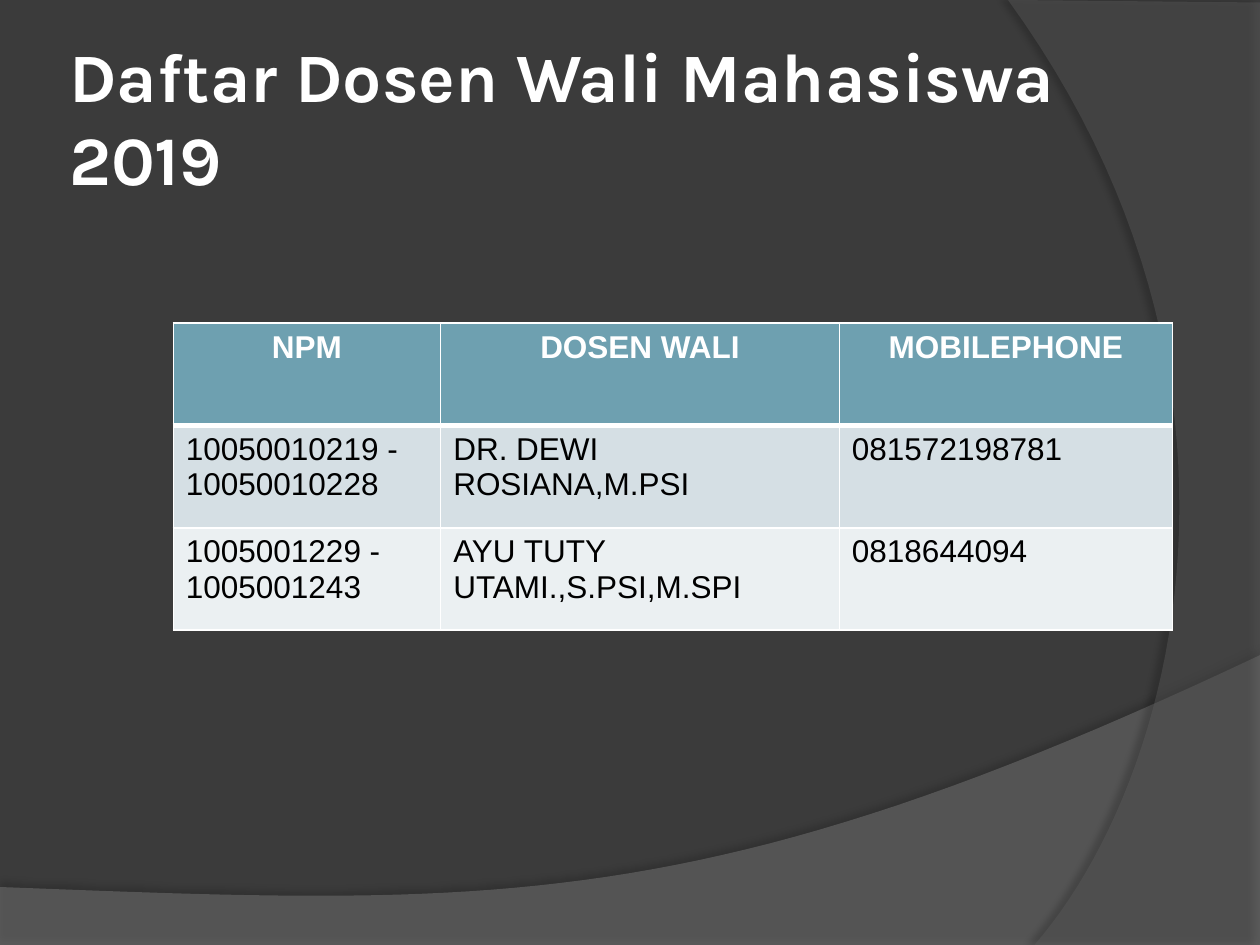
from lxml.etree import SubElement
from pptx import Presentation
from pptx.dml.color import RGBColor
from pptx.enum.text import MSO_ANCHOR, PP_ALIGN
from pptx.oxml import parse_xml
from pptx.oxml.ns import nsdecls, qn
from pptx.util import Inches, Pt

WIDE, HIGH = Inches(10), Inches(7.5)
WHITE = RGBColor(0xFF, 0xFF, 0xFF)
BLACK = RGBColor(0, 0, 0)
DARK = RGBColor(0x3B, 0x3B, 0x3B)
GREY = RGBColor(0x7F, 0x7F, 0x7F)
DUSK = RGBColor(0x5E, 0x5E, 0x5E)
TEAL = RGBColor(0x6E, 0xA0, 0xB0)
BANDS = [RGBColor(0xD5, 0xDF, 0xE4), RGBColor(0xEB, 0xF0, 0xF2)]

# Boxes are left, top, width and height in percent of the slide.
WAVE = (0, 69.33, 100, 30.67)
ARC = (80, 0, 20, 100)
TITLE = (5, 4, 81.7, 16.67)
TABLE = (13.75, 34.2, 79.3, 32.5)

HEAD = {"size": Pt(18), "name": "Arial", "bold": True}
BODY = {**HEAD, "bold": False}
COLS = [2.12, 3.16, 2.64]
ROWS = [
    ["NPM", "DOSEN WALI", "MOBILEPHONE"],
    ["10050010219 - 10050010228", "DR. DEWI ROSIANA,M.PSI", "081572198781"],
    ["1005001229 - 1005001243", "AYU TUTY UTAMI.,S.PSI,M.SPI", "0818644094"],
]


def place(box):
    left, top, wide, high = box
    return [int(part * full / 100) for part, full in
            ((left, WIDE), (top, HIGH), (wide, WIDE), (high, HIGH))]


def curve(ends, steps=48):
    """Points along a cubic curve given by its four control points."""
    for step in range(1, steps + 1):
        t = step / steps
        u = 1 - t
        share = (u ** 3, 3 * u * u * t, 3 * u * t * t, t ** 3)
        yield tuple(sum(s * p[axis] for s, p in zip(share, ends))
                    for axis in (0, 1))


def style(run, look, color):
    for key, value in look.items():
        setattr(run.font, key, value)
    run.font.color.rgb = color


def sweep(slide, box, edge, bend, color, alpha, shade):
    """Draw a see-through shape: straight edge points, then a curve back."""
    left, top, wide, high = place(box)
    points = [(int(left + x * wide / 100), int(top + y * high / 100))
              for x, y in [*edge, *curve([edge[-1], *bend])]]
    form = slide.shapes.build_freeform(*points[0], scale=1)
    form.add_line_segments(points[1:], close=True)
    shape = form.convert_to_shape()
    shape.fill.solid()
    shape.fill.fore_color.rgb = color
    shape.line.fill.background()
    tint = shape.fill._xPr.find(qn("a:solidFill"))[0]
    SubElement(tint, qn("a:alpha")).set("val", str(alpha * 1000))
    dark, blur, gap, turn = shade
    shape._element.spPr.append(parse_xml(
        f'<a:effectLst {nsdecls("a")}><a:outerShdw blurRad="{Pt(blur)}" '
        f'dist="{Pt(gap)}" dir="{turn * 60000}" algn="ctr" rotWithShape="0">'
        f'<a:srgbClr val="{BLACK}"><a:alpha val="{dark * 1000}"/></a:srgbClr>'
        '</a:outerShdw></a:effectLst>'))


def title(slide, box, text):
    frame = slide.shapes.add_textbox(*place(box)).text_frame
    inset = Inches(0.05)
    look = {"word_wrap": True, "vertical_anchor": MSO_ANCHOR.MIDDLE,
            "margin_left": inset, "margin_right": inset,
            "margin_top": inset, "margin_bottom": inset}
    for key, value in look.items():
        setattr(frame, key, value)
    run = frame.paragraphs[0].add_run()
    run.text = text
    style(run, {"size": Pt(39.6), "name": "Karla", "bold": True}, WHITE)


def border(cell, row):
    """White lines, with a thick one under the header row."""
    thick = {("B", 0), ("T", 1)}
    props = cell._tc.get_or_add_tcPr()
    for spot, side in enumerate("LRTB"):
        width = Pt(3 if (side, row) in thick else 1)
        props.insert(spot, parse_xml(
            f'<a:ln{side} {nsdecls("a")} w="{width}"><a:solidFill>'
            f'<a:srgbClr val="{WHITE}"/></a:solidFill></a:ln{side}>'))


def table(slide, box, rows):
    left, top, wide, high = place(box)
    grid = slide.shapes.add_table(
        len(rows), len(COLS), left, top, wide, high).table
    for col, part in zip(grid.columns, COLS):
        col.width = int(wide * part / sum(COLS))
    for r, texts in enumerate(rows):
        grid.rows[r].height = high // len(rows)
        for c, text in enumerate(texts):
            cell = grid.cell(r, c)
            cell.fill.solid()
            cell.fill.fore_color.rgb = BANDS[(r - 1) % 2] if r else TEAL
            border(cell, r)
            para = cell.text_frame.paragraphs[0]
            para.alignment = PP_ALIGN.LEFT if r else PP_ALIGN.CENTER
            run = para.add_run()
            run.text = text
            style(run, BODY if r else HEAD, BLACK if r else WHITE)


def main():
    deck = Presentation()
    deck.slide_width, deck.slide_height = WIDE, HIGH
    slide = deck.slides.add_slide(deck.slide_layouts[6])
    slide.background.fill.solid()
    slide.background.fill.fore_color.rgb = DARK
    sweep(slide, WAVE, [(0, 80), (0, 100), (100, 100), (100, 0)],
          [(55.9, 90.8), (39.1, 86.5), (0, 80)], GREY, 45, (35, 4, 3.5, 270))
    sweep(slide, ARC, [(100, 0.27), (100, 100), (10.5, 100)],
          [(67.5, 82.5), (109, 40), (0, 0)], DUSK, 40, (45, 4, 4, 180))
    title(slide, TITLE, "Daftar Dosen Wali Mahasiswa 2019")
    table(slide, TABLE, ROWS)
    deck.save("out.pptx")


if __name__ == "__main__":
    main()
